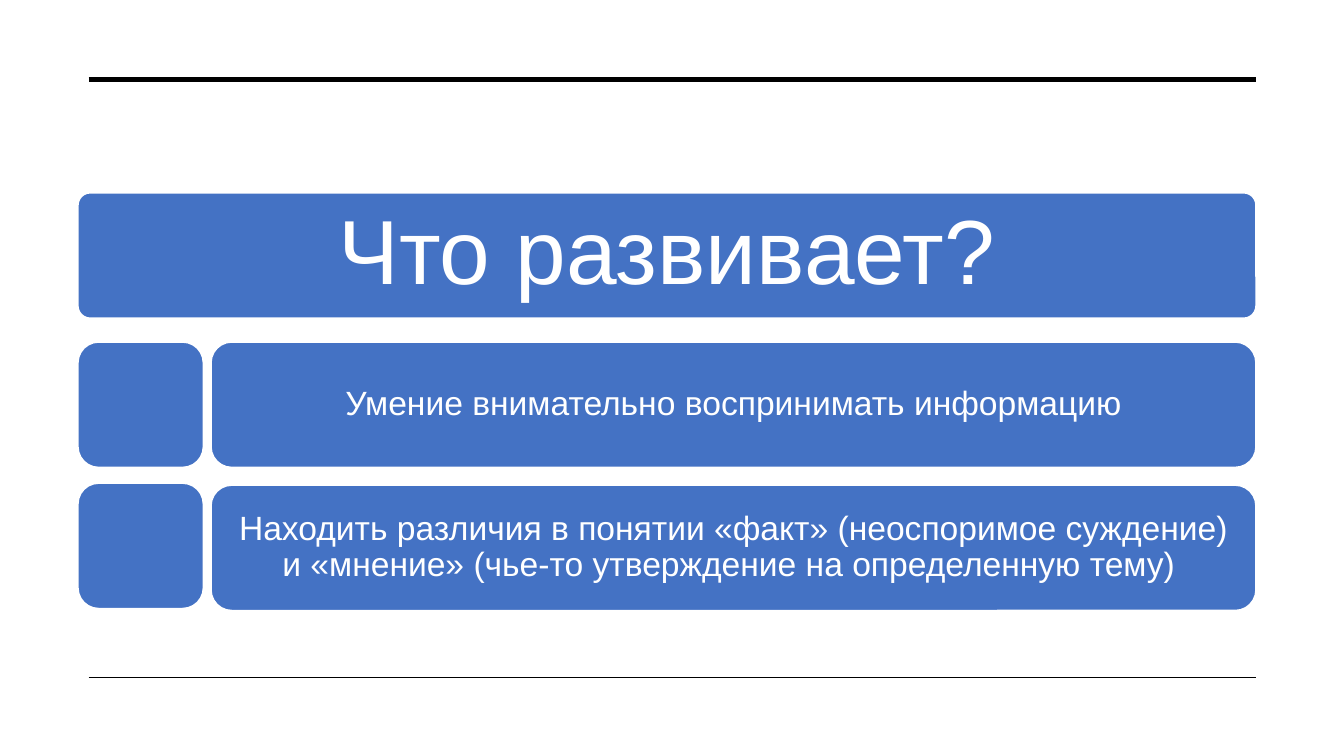
import pptx
import pptx.dml.color
import pptx.enum.shapes
import pptx.enum.text
import pptx.util
from pptx.util import Inches
from lxml import etree

BLUE, WHITE, BLACK = "4472C4", "FFFFFF", "000000"


def color(value):
    return pptx.dml.color.RGBColor.from_string(value)


def add_card(left, top, width, corner, text="", size=24, inset_x=0.19, inset_y=0.19):
    shape = slide.shapes.add_shape(
        pptx.enum.shapes.MSO_SHAPE.ROUNDED_RECTANGLE,
        Inches(left), Inches(top), Inches(width), Inches(card_height))
    shape.adjustments[0] = corner
    shape.shadow.inherit = False
    shape.fill.solid()
    shape.fill.fore_color.rgb = color(BLUE)
    shape.line.color.rgb = color(WHITE)
    shape.line.width = pptx.util.Pt(1.5)
    if not text:
        return
    frame = shape.text_frame
    frame.word_wrap = True
    frame.vertical_anchor = pptx.enum.text.MSO_ANCHOR.MIDDLE
    frame.margin_left = frame.margin_right = Inches(inset_x)
    frame.margin_top = frame.margin_bottom = Inches(inset_y)
    paragraph = frame.paragraphs[0]
    paragraph.text = text
    paragraph.alignment = pptx.enum.text.PP_ALIGN.CENTER
    paragraph.line_spacing = 0.9
    paragraph.font.name = "Arial"
    paragraph.font.size = pptx.util.Pt(size)
    paragraph.font.color.rgb = color(WHITE)


presentation = pptx.Presentation()
presentation.slide_width = Inches(13.33)
presentation.slide_height = Inches(7.5)
slide = presentation.slides.add_slide(presentation.slide_layouts[6])

# Rules above and below the content
for y, weight in [(0.79, 3.5), (6.72, 1)]:
    rule = slide.shapes.add_connector(
        pptx.enum.shapes.MSO_CONNECTOR.STRAIGHT,
        Inches(0.88), Inches(y), Inches(12.46), Inches(y))
    rule.line.color.rgb = color(BLACK)
    rule.line.width = pptx.util.Pt(weight)
    etree.SubElement(rule._element.spPr, pptx.oxml.ns.qn("a:effectLst"))

# Heading card
card_left, card_height = 0.77, 1.25
add_card(card_left, 1.91, 11.69, 0.1, "Что развивает?", 65, 0.14, 0.09)

# Skill rows: a square marker and a text card
skills = [
    (3.39, 3.39, "Умение внимательно воспринимать информацию"),
    (4.79, 4.81, "Находить различия в понятии «факт» (неоспоримое суждение) "
                 "и «мнение» (чье-то утверждение на определенную тему) "),
]
for marker_top, text_top, skill in skills:
    add_card(card_left, marker_top, card_height, 0.167)
    add_card(2.09, text_top, 10.37, 0.167, skill)

presentation.save("out.pptx")
